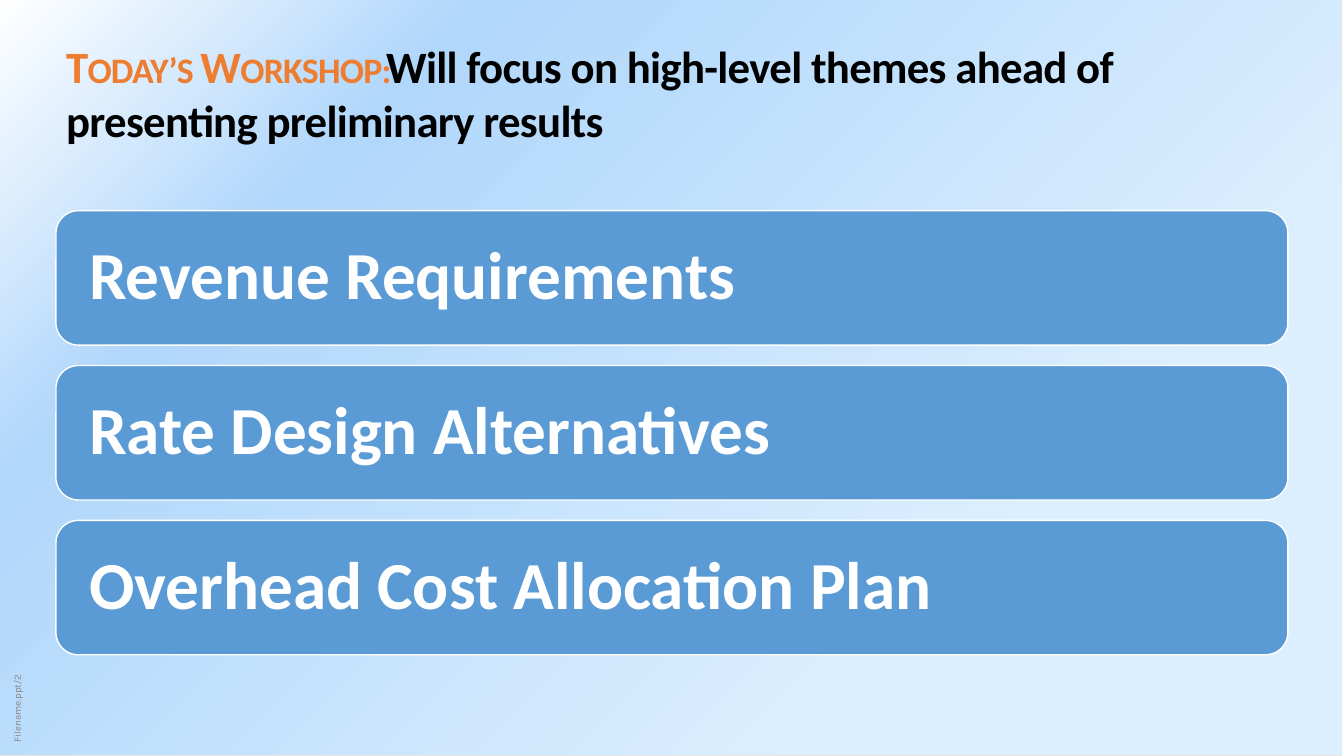
from pptx import Presentation
from pptx.dml.color import RGBColor
from pptx.enum.shapes import MSO_SHAPE
from pptx.enum.text import MSO_ANCHOR, PP_ALIGN
from pptx.oxml import parse_xml
from pptx.oxml.ns import nsdecls, qn
from pptx.util import Pt

COLORS = {
    "accent": "ED7D31", "title": "000000", "card": "5B9BD5", "white": "FFFFFF",
    "footer": "8B8585", "frame": "E7E6E6", "pale": "DCEFFE", "sky": "B1D7FB",
}


def add_run(p, text, size, color, font="Calibri", bold=False, spacing=None, small_caps=False):
    r = p.add_run()
    r.text = text
    r.font.size, r.font.name, r.font.bold = Pt(size), font, bold
    r.font.color.rgb = RGBColor.from_string(COLORS[color])
    rPr = r.font._element
    if spacing is not None:
        rPr.set("spc", str(int(spacing * 100)))
    if small_caps:
        rPr.set("cap", "small")


class WorkshopSlide:
    left, width = 40, 880

    def __init__(self, prs):
        self.s = prs.slides.add_slide(prs.slide_layouts[5])

    def shape(self, kind, x, y, w, h, fill, line, line_width):
        sp = self.s.shapes.add_shape(kind, Pt(x), Pt(y), Pt(w), Pt(h))
        sp.shadow.inherit = False
        sp.fill.solid()
        sp.fill.fore_color.rgb = RGBColor.from_string(COLORS[fill])
        sp.line.color.rgb = RGBColor.from_string(COLORS[line])
        sp.line.width = Pt(line_width)
        return sp

    def frame(self, tf, anchor, inset_x, inset_y):
        tf.word_wrap = True
        tf.vertical_anchor = anchor
        tf.margin_left = tf.margin_right = Pt(inset_x)
        tf.margin_top = tf.margin_bottom = Pt(inset_y)
        p = tf.paragraphs[0]
        p.alignment = PP_ALIGN.LEFT
        return p

    def backdrop(self):
        sp = self.shape(MSO_SHAPE.RECTANGLE, -1.5, 0, 960, 540, "pale", "frame", 0.75)
        stops = "".join(
            f'<a:gs pos="{pos * 1000}"><a:srgbClr val="{COLORS[name]}"/></a:gs>'
            for pos, name in ((25, "pale"), (77, "sky"), (100, "white")))
        spPr = sp.element.spPr
        spPr.replace(spPr.find(qn("a:solidFill")), parse_xml(
            f'<a:gradFill {nsdecls("a")} rotWithShape="1"><a:gsLst>{stops}</a:gsLst>'
            '<a:path path="circle"><a:fillToRect l="100000" t="100000"/></a:path></a:gradFill>'))
        self.s.shapes.element.insert(2, sp.element)

    def title(self, y, h, lead, rest):
        sp = self.s.shapes.title
        sp.left, sp.top, sp.width, sp.height = Pt(self.left), Pt(y), Pt(self.width), Pt(h)
        p = self.frame(sp.text_frame, MSO_ANCHOR.MIDDLE, 7.2, 3.6)
        add_run(p, lead, 32, "accent", bold=True, spacing=-0.5, small_caps=True)
        add_run(p, rest, 32, "title", bold=True, spacing=-0.5)

    def card(self, y, h, text):
        sp = self.shape(MSO_SHAPE.ROUNDED_RECTANGLE, self.left, y, self.width, h, "card", "white", 1)
        p = self.frame(sp.text_frame, MSO_ANCHOR.MIDDLE, 19, 19)
        p.line_spacing = 0.9
        add_run(p, text, 48, "white", bold=True)

    def side_label(self, x, y, w, h, text):
        sp = self.s.shapes.add_textbox(Pt(x), Pt(y), Pt(w), Pt(h))
        sp.rotation = 270
        p = self.frame(sp.text_frame, MSO_ANCHOR.BOTTOM, 3.6, 3.6)
        add_run(p, text, 7, "footer", font="Karla")


def main():
    prs = Presentation()
    prs.slide_width, prs.slide_height = Pt(960), Pt(540)
    slide = WorkshopSlide(prs)
    slide.backdrop()
    slide.side_label(-84.2, 429.8, 192, 16, "Filename.ppt/2")
    slide.title(24, 84, "Today’s Workshop: ",
                "Will focus on high-level themes ahead of presenting preliminary results")
    topics = ["Revenue Requirements", "Rate Design Alternatives", "Overhead Cost Allocation Plan"]
    for i, topic in enumerate(topics):
        slide.card(150.5 + i * 110.6, 96, topic)
    prs.save("out.pptx")


if __name__ == "__main__":
    main()
